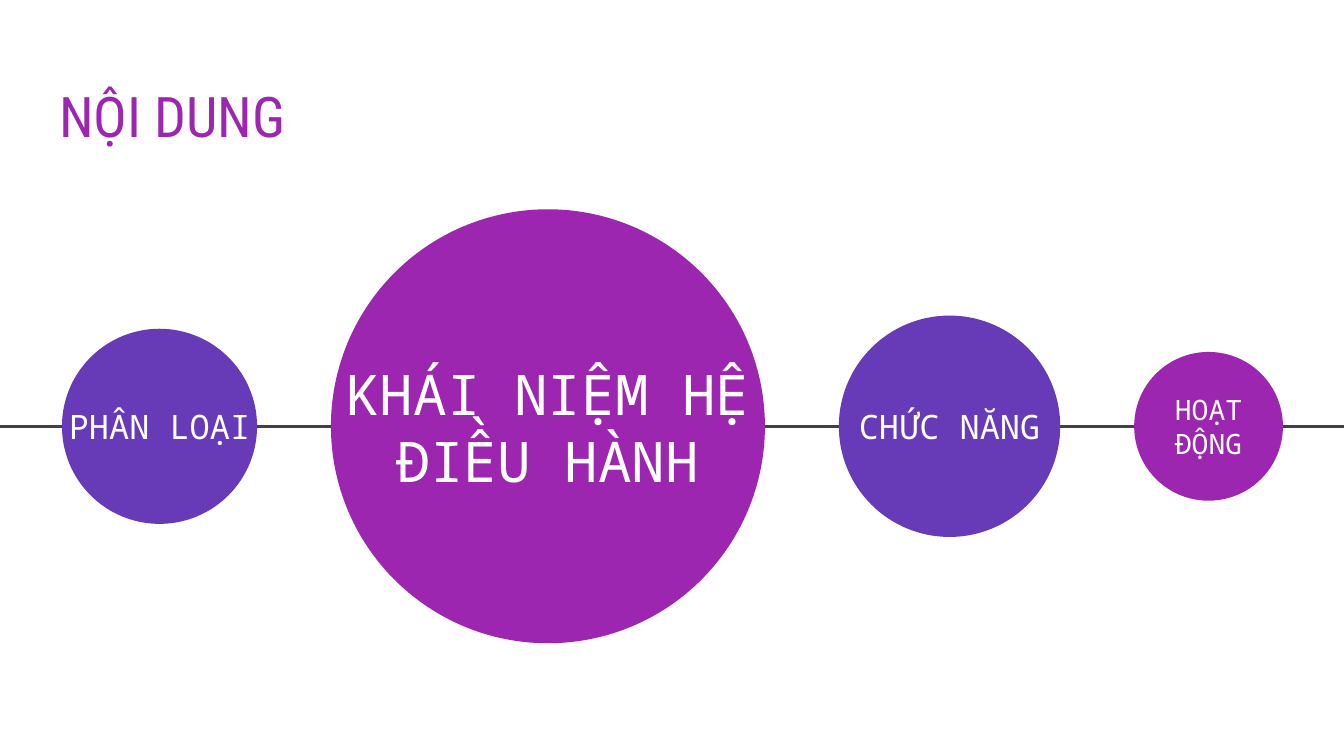
from lxml import etree
from pptx import Presentation
from pptx.dml.color import RGBColor
from pptx.enum.shapes import MSO_CONNECTOR, MSO_SHAPE
from pptx.enum.text import MSO_ANCHOR, MSO_AUTO_SIZE, PP_ALIGN
from pptx.oxml.ns import qn
from pptx.util import Pt

STRAIGHT = MSO_CONNECTOR.STRAIGHT
OVAL = MSO_SHAPE.OVAL
MIDDLE, BOTTOM = MSO_ANCHOR.MIDDLE, MSO_ANCHOR.BOTTOM
LEFT, CENTER = PP_ALIGN.LEFT, PP_ALIGN.CENTER
NO_FIT = MSO_AUTO_SIZE.NONE

WIDTH, HEIGHT = 720, 405
PURPLE, VIOLET, GREY, WHITE = "9C26B0", "673AB7", "424242", "FFFFFF"


def color(value):
    return RGBColor.from_string(value)


class Deck:
    title_font = "Roboto Condensed"
    label_font = "Noto Sans Mono"
    inset = 7.2

    def __init__(self):
        self.prs = Presentation()
        self.prs.slide_width, self.prs.slide_height = Pt(WIDTH), Pt(HEIGHT)
        self.slide = self.prs.slides.add_slide(self.prs.slide_layouts[5])
        self.slide.background.fill.solid()
        self.slide.background.fill.fore_color.rgb = color(WHITE)

    def set_text(self, frame, text, size, font, fill, align, anchor):
        frame.word_wrap = True
        frame.auto_size = NO_FIT
        frame.vertical_anchor = anchor
        frame.margin_left = frame.margin_right = Pt(self.inset)
        frame.margin_top = frame.margin_bottom = Pt(self.inset)
        paragraph = frame.paragraphs[0]
        paragraph.alignment = align
        run = paragraph.add_run()
        run.text = text
        run.font.size, run.font.name = Pt(size), font
        run.font.color.rgb = color(fill)

    def title(self, text, left, top, width, height):
        heading = self.slide.shapes.title
        heading.left, heading.top = Pt(left), Pt(top)
        heading.width, heading.height = Pt(width), Pt(height)
        self.set_text(heading.text_frame, text, 30, self.title_font, PURPLE, LEFT, BOTTOM)

    def line(self, x1, y1, x2, y2):
        axis = self.slide.shapes.add_connector(STRAIGHT, Pt(x1), Pt(y1), Pt(x2), Pt(y2))
        axis.line.color.rgb = color(GREY)
        axis.line.width = Pt(1.5)
        etree.SubElement(axis._element.spPr, qn("a:effectLst"))

    def circle(self, center_x, center_y, diameter, fill):
        disc = self.slide.shapes.add_shape(
            OVAL, Pt(center_x - diameter / 2), Pt(center_y - diameter / 2),
            Pt(diameter), Pt(diameter))
        disc.shadow.inherit = False
        disc.fill.solid()
        disc.fill.fore_color.rgb = color(fill)
        disc.line.fill.background()

    def label(self, text, center_x, center_y, width, size, height=47.5):
        caption = self.slide.shapes.add_textbox(
            Pt(center_x - width / 2), Pt(center_y - height / 2), Pt(width), Pt(height))
        self.set_text(caption.text_frame, text, size, self.label_font, WHITE, CENTER, MIDDLE)


def main():
    deck = Deck()
    axis_y = 228.4
    deck.line(0, axis_y, WIDTH, axis_y)
    deck.title("NỘI DUNG", 24.5, 29.5, 671, 57.6)

    topics = [
        ("PHÂN LOẠI", 104.5, 127.5, 18, VIOLET),
        ("KHÁI NIỆM HỆ ĐIỀU HÀNH", 232.5, 232.5, 30, PURPLE),
        ("CHỨC NĂNG", 118.6, 118.6, 18, VIOLET),
        ("HOẠT ĐỘNG", 79.7, 79.7, 15, PURPLE),
    ]
    left, gap = 33.2, 39.6
    for name, diameter, label_width, size, fill in topics:
        center_x = left + diameter / 2
        deck.circle(center_x, axis_y, diameter, fill)
        deck.label(name, center_x, axis_y, label_width, size)
        left += diameter + gap

    deck.prs.save("out.pptx")


if __name__ == "__main__":
    main()
